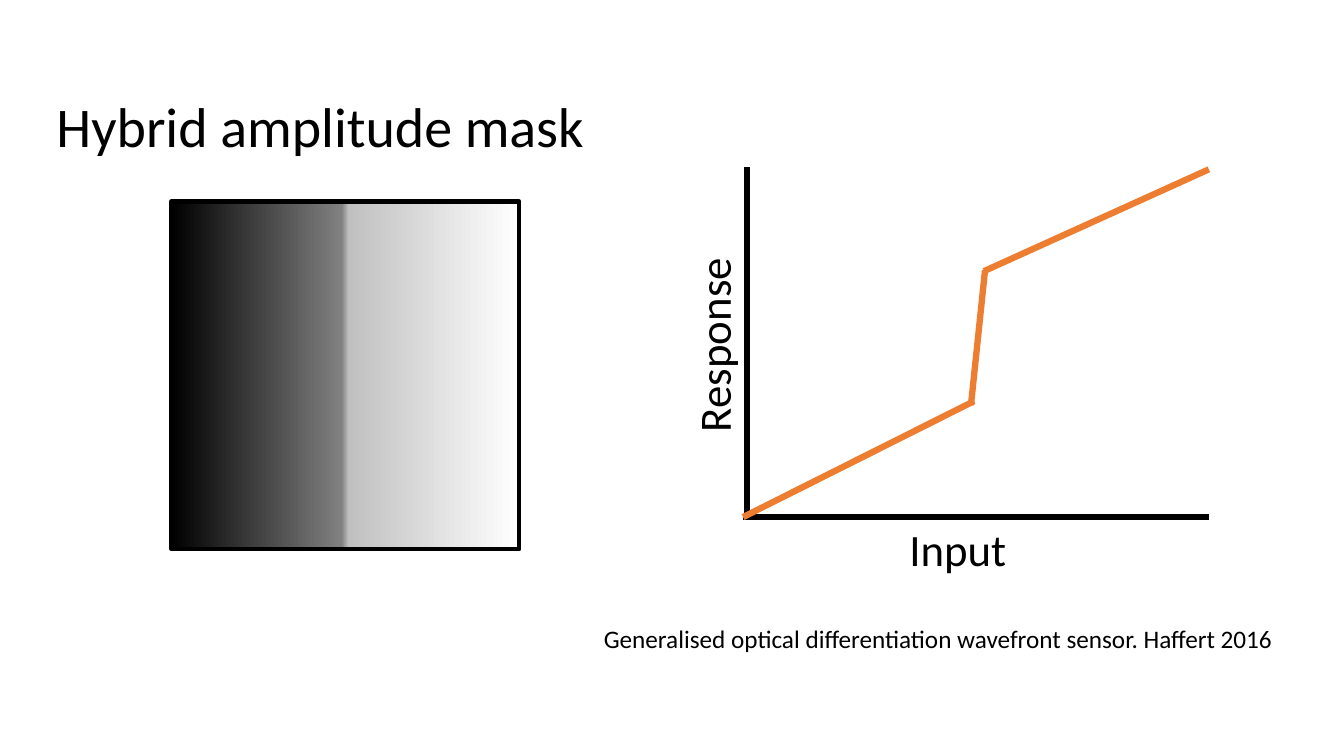
import pptx
import pptx.util
import pptx.dml.color
import pptx.enum.shapes
import pptx.enum.text
import pptx.oxml
import pptx.oxml.ns
import lxml.etree

Inches, Pt = pptx.util.Inches, pptx.util.Pt
qn = pptx.oxml.ns.qn
COLORS = {"ink": "000000", "curve": "ED7D31"}
MASK_STOPS = [(0, "000000"), (49, "808080"), (51, "C0C0C0"), (100, "FFFFFF")]
FRAME_FORMAT = {
    "word_wrap": True,
    "auto_size": pptx.enum.text.MSO_AUTO_SIZE.NONE,
    "vertical_anchor": pptx.enum.text.MSO_ANCHOR.TOP,
    "margin_left": Inches(0.1), "margin_right": Inches(0.1),
    "margin_top": Inches(0.05), "margin_bottom": Inches(0.05),
}


def rgb(name):
    return pptx.dml.color.RGBColor.from_string(COLORS[name])


def fill_text(shape, text, size):
    """Write one left-aligned line of text into a shape."""
    frame = shape.text_frame
    for name, value in FRAME_FORMAT.items():
        setattr(frame, name, value)
    para = frame.paragraphs[0]
    para.alignment = pptx.enum.text.PP_ALIGN.LEFT
    span = para.add_run()
    span.text = text
    for name, value in {"name": "Calibri", "size": Pt(size)}.items():
        setattr(span.font, name, value)
    span.font.color.rgb = rgb("ink")


def add_label(page, box, text, size, rotation=0):
    label = page.shapes.add_textbox(*map(Inches, box))
    label.rotation = rotation
    fill_text(label, text, size)


def add_title(page, box, text):
    title = page.shapes.title
    title.left, title.top, title.width, title.height = map(Inches, box)
    fill_text(title, text, 40)


def add_mask(page, box):
    """Square whose brightness jumps at its middle."""
    mask = page.shapes.add_shape(
        pptx.enum.shapes.MSO_SHAPE.RECTANGLE, *map(Inches, box))
    mask.shadow.inherit = False
    mask.line.color.rgb = rgb("ink")
    mask.line.width = Pt(3)
    mask.fill.gradient()
    mask.fill.gradient_angle = 0
    # Replace the two default stops
    stops = mask.element.spPr.find(".//" + qn("a:gsLst"))
    for stop in list(stops):
        stops.remove(stop)
    for percent, color in MASK_STOPS:
        stop = lxml.etree.SubElement(stops, qn("a:gs"), pos=str(percent * 1000))
        lxml.etree.SubElement(stop, qn("a:srgbClr"), val=color)


def add_line(shapes, start, end, color):
    line = shapes.add_connector(
        pptx.enum.shapes.MSO_CONNECTOR.STRAIGHT, *map(Inches, start + end))
    line.line.color.rgb = rgb(color)
    line.line.width = Pt(4.5)
    lxml.etree.SubElement(line.element.spPr, qn("a:effectLst"))


def add_response_plot(page, box):
    """Axes, their labels and the stepped response curve."""
    left, top, width, height = box
    right, bottom = left + width, top + height

    # Axes
    axes = page.shapes.add_group_shape()
    add_line(axes.shapes, (left + 0.04, top), (left + 0.04, bottom), "ink")
    add_line(axes.shapes, (right, bottom), (left, bottom), "ink")

    # Axis labels
    add_label(page, (left - 1.37, top + 1.33, 2.15, 0.64), "Response", 32, 270)
    add_label(page, (left + 1.55, bottom, 1.27, 0.64), "Input", 32)

    # Curve: two slopes and the step between them
    for start, end in [((0, 3.47), (2.29, 2.32)),
                       ((2.39, 1.03), (4.62, 0.02)),
                       ((2.26, 2.36), (2.4, 1.02))]:
        add_line(page.shapes, (left + start[0], top + start[1]),
                 (left + end[0], top + end[1]), "curve")


def main():
    deck = pptx.Presentation()
    deck.slide_width, deck.slide_height = Inches(13.33), Inches(7.5)
    page = deck.slides.add_slide(deck.slide_layouts[5])
    add_mask(page, (1.7, 2, 3.45, 3.45))
    add_title(page, (0.46, 0.86, 5.93, 0.77), "Hybrid amplitude mask")
    add_response_plot(page, (7.37, 1.66, 4.62, 3.47))
    add_label(page, (5.89, 6.13, 6.93, 0.4),
              "Generalised optical differentiation wavefront sensor. Haffert 2016", 18)
    deck.save("out.pptx")


if __name__ == "__main__":
    main()
